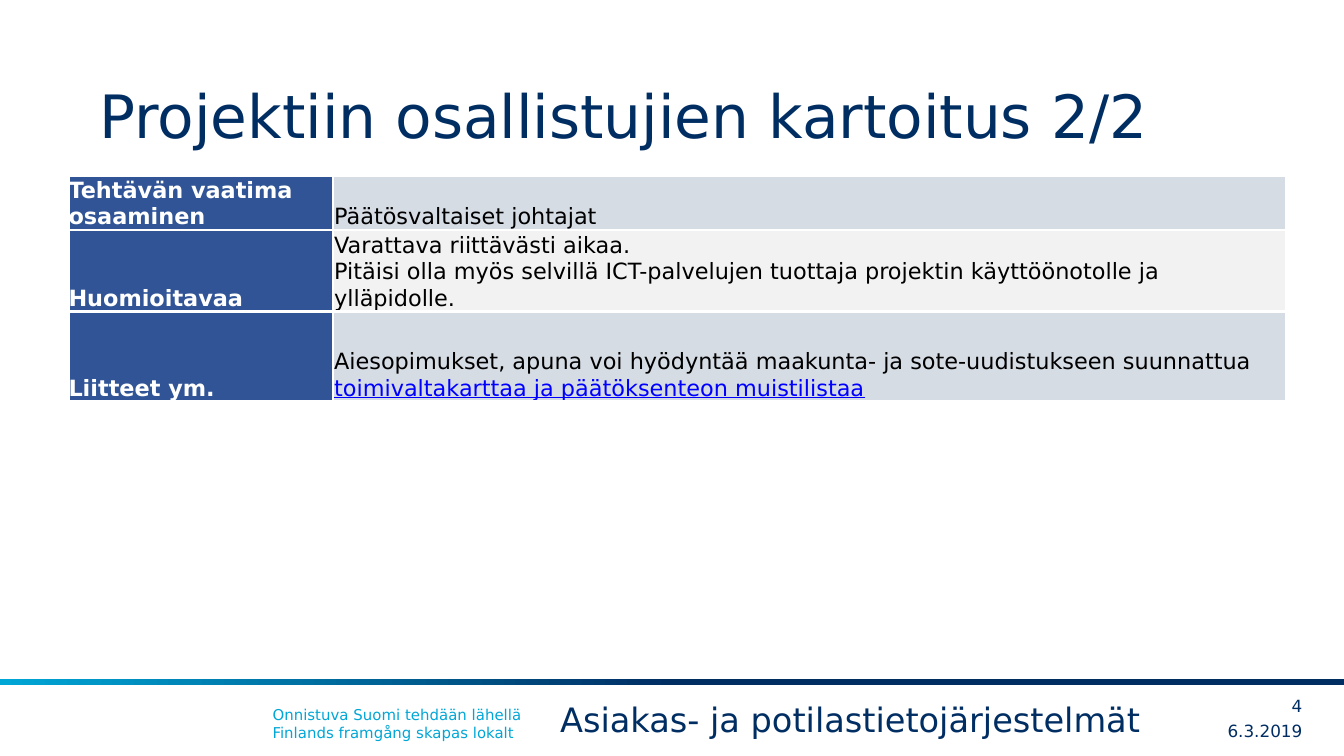
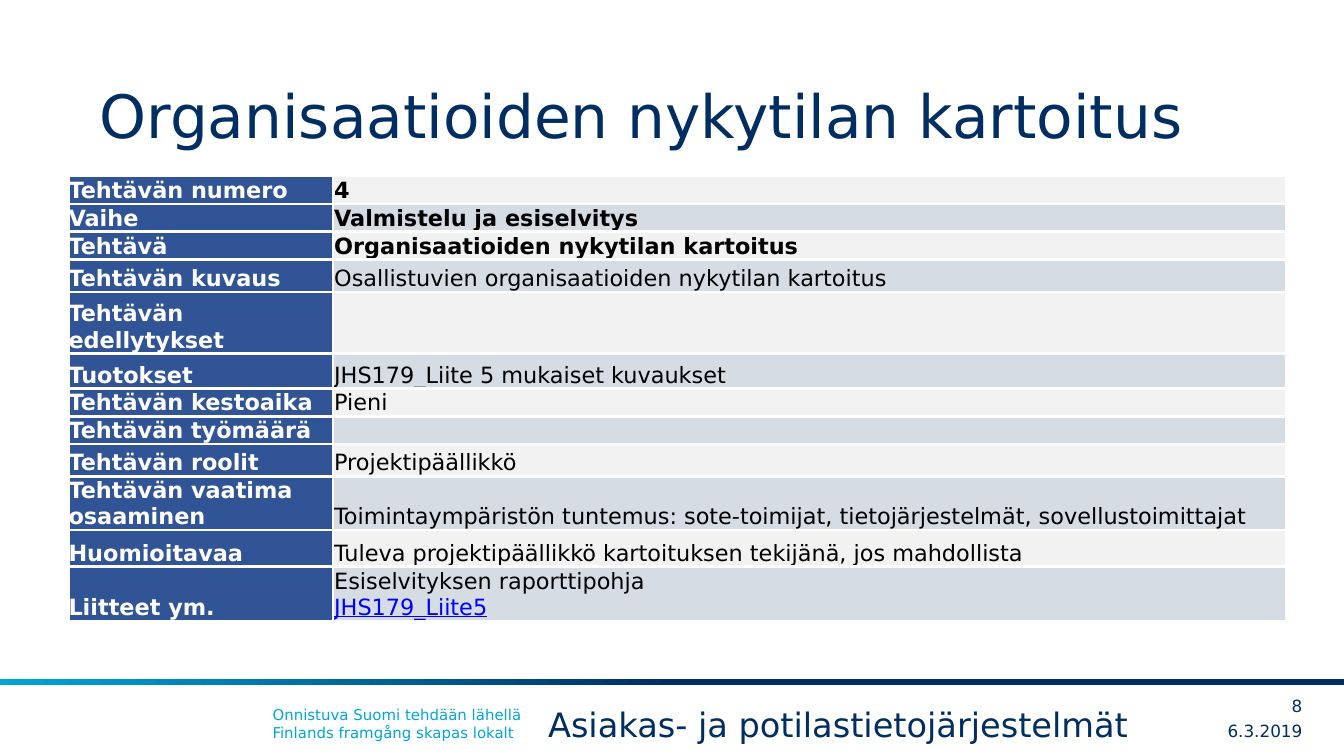
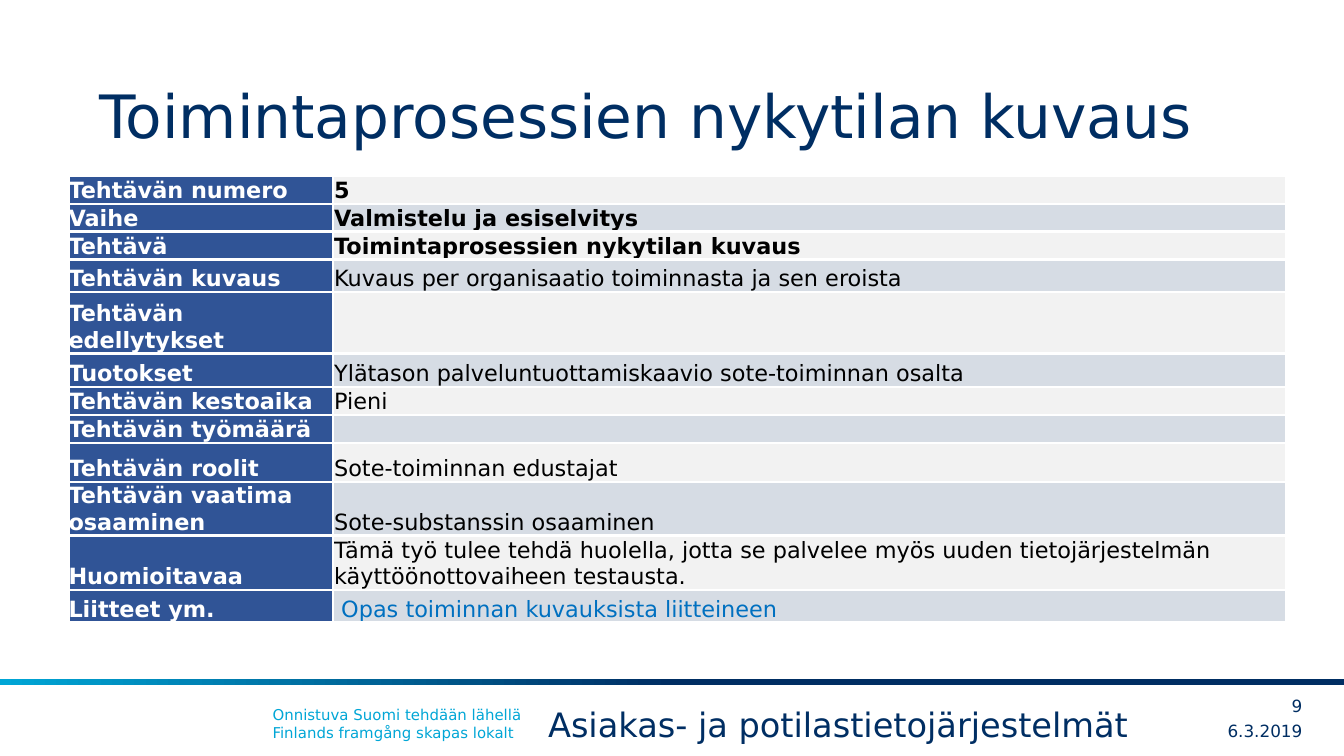
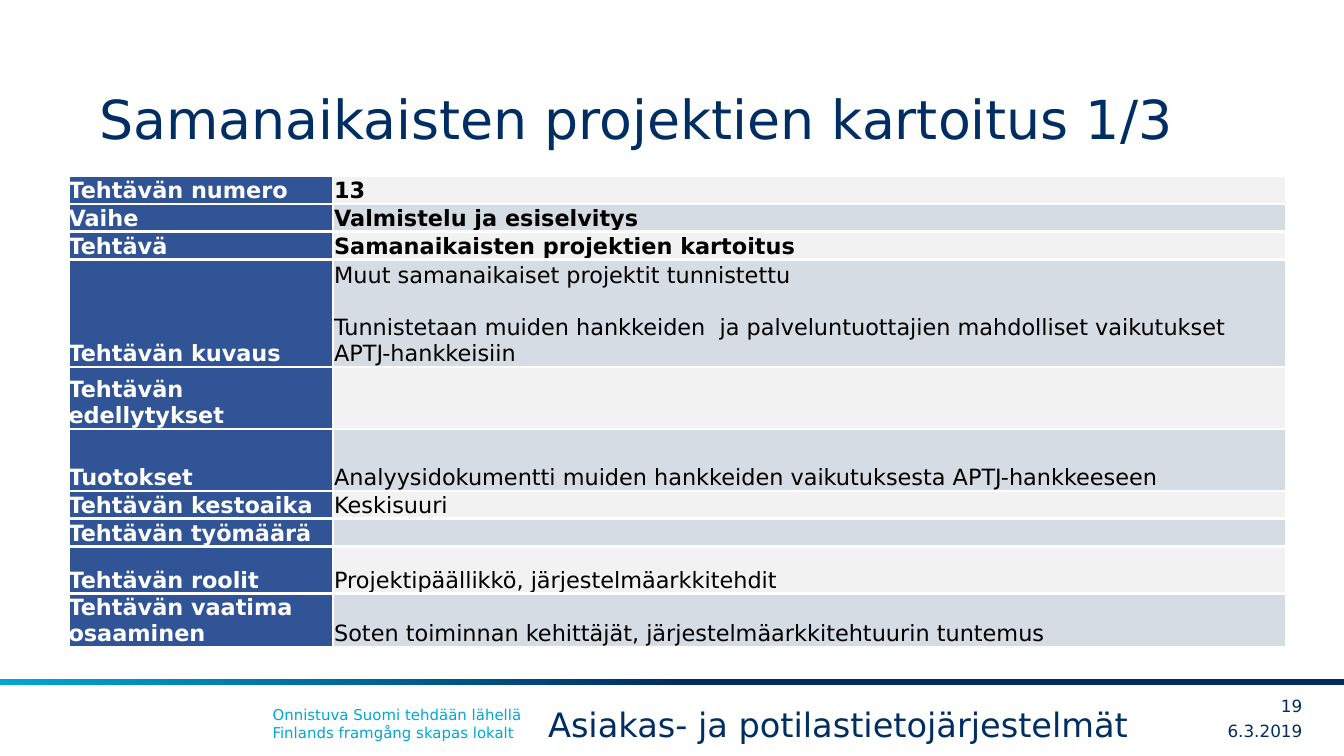
from dataclasses import dataclass

from lxml import etree
from pptx import Presentation
from pptx.dml.color import RGBColor
from pptx.enum.shapes import MSO_SHAPE
from pptx.enum.text import MSO_ANCHOR, MSO_AUTO_SIZE, PP_ALIGN
from pptx.oxml.ns import qn
from pptx.util import Inches, Pt

RECT = MSO_SHAPE.RECTANGLE
TOP, MIDDLE, BOTTOM = MSO_ANCHOR.TOP, MSO_ANCHOR.MIDDLE, MSO_ANCHOR.BOTTOM
LEFT, RIGHT = PP_ALIGN.LEFT, PP_ALIGN.RIGHT
GROW, FIXED = MSO_AUTO_SIZE.SHAPE_TO_FIT_TEXT, MSO_AUTO_SIZE.NONE

SLIDE_WIDTH = Inches(10)
SLIDE_HEIGHT = SLIDE_WIDTH * 9 // 16


@dataclass(frozen=True)
class Theme:
    font: str = "DejaVu Sans"
    navy: str = "002E63"
    cyan: str = "00A6D6"
    label_fill: str = "305496"
    value_fills: tuple[str, str] = ("F2F2F2", "D6DCE4")
    white: str = "FFFFFF"
    black: str = "000000"
    link: str = "0000FF"
    guide: str = "0070C0"
    title_size: float = 32
    long_title_size: float = 28.8
    topic_size: float = 18
    table_size: float = 12
    footer_size: float = 9
    slogan_size: float = 8
    border_width: float = 1.5
    cell_inset: float = 0.5


THEME = Theme()


@dataclass(frozen=True)
class TextStyle:
    """Type and frame settings of a text box."""
    size: float
    color: str = THEME.navy
    anchor: MSO_ANCHOR = TOP
    align: PP_ALIGN = LEFT
    insets: tuple[float, float] = (0.1, 0.05)
    wrap: bool = True
    grow: bool = False


@dataclass(frozen=True)
class Value:
    """Value of one task field; the underlined link ends the last paragraph."""
    paragraphs: tuple[str, ...] = ()
    height: float = 0.04
    link: str = ""
    color: str = THEME.black


@dataclass(frozen=True)
class TaskSlide:
    number: int
    title: str
    values: tuple[Value, ...]
    table_height: float
    first_field: int = 0
    title_size: float = THEME.title_size
    topic_at: tuple[float, float] = (3.98, 5.19)


FIELDS = (
    "Tehtävän numero", "Vaihe", "Tehtävä", "Tehtävän kuvaus",
    "Tehtävän edellytykset", "Tuotokset", "Tehtävän kestoaika",
    "Tehtävän työmäärä", "Tehtävän roolit", "Tehtävän vaatima osaaminen",
    "Huomioitavaa", "Liitteet ym.",
)
BOLD_FIELDS = 3
COLUMN_WIDTHS = (1.97, 7.09)

SLOGAN = TextStyle(THEME.slogan_size, THEME.cyan, grow=True)
FOOTER = TextStyle(THEME.footer_size, anchor=MIDDLE, align=RIGHT, insets=(0, 0))
TOPIC = TextStyle(THEME.topic_size, wrap=False, grow=True)


def task(number: str, name: str) -> tuple[Value, ...]:
    """The three identifying fields that open a task form."""
    return (Value((number,)), Value(("Valmistelu ja esiselvitys",)),
            Value((name,), 0.14))


SLIDES = (
    TaskSlide(4, "Projektiin osallistujien kartoitus 2/2", (
        Value(("Päätösvaltaiset johtajat",), 0.39),
        Value(("Varattava riittävästi aikaa.\vPitäisi olla myös selvillä "
               "ICT-palvelujen tuottaja projektin käyttöönotolle ja "
               "ylläpidolle.",), 0.56),
        Value(("Aiesopimukset, apuna voi hyödyntää maakunta- ja "
               "sote-uudistukseen suunnattua ",), 0.67,
              "toimivaltakarttaa ja päätöksenteon muistilistaa"),
    ), 1.68, first_field=9, topic_at=(4.07, 5.15)),
    TaskSlide(8, "Organisaatioiden nykytilan kartoitus", (
        *task("4", "Organisaatioiden nykytilan kartoitus"),
        Value(("Osallistuvien organisaatioiden nykytilan kartoitus",), 0.24),
        Value(height=0.46),
        Value(("JHS179_Liite 5 mukaiset kuvaukset",), 0.26),
        Value(("Pieni",)),
        Value(height=0.18),
        Value(("Projektipäällikkö",), 0.24),
        Value(("Toimintaympäristön tuntemus: sote-toimijat, "
               "tietojärjestelmät, sovellustoimittajat",), 0.39),
        Value(("Tuleva projektipäällikkö kartoituksen tekijänä, "
               "jos mahdollista",), 0.27),
        Value(("Esiselvityksen raporttipohja\v",), 0.39, "JHS179_Liite5"),
    ), 3.33),
    TaskSlide(9, "Toimintaprosessien nykytilan kuvaus", (
        *task("5", "Toimintaprosessien nykytilan kuvaus"),
        Value(("Kuvaus per organisaatio toiminnasta ja sen eroista",), 0.24),
        Value(height=0.46),
        Value(("Ylätason palveluntuottamiskaavio sote-toiminnan osalta",),
              0.25),
        Value(("Pieni",)),
        Value(height=0.18),
        Value(("Sote-toiminnan edustajat",), 0.29),
        Value(("Sote-substanssin osaaminen",), 0.39),
        Value(("Tämä työ tulee tehdä huolella, jotta se palvelee myös uuden "
               "tietojärjestelmän käyttöönottovaiheen testausta.",), 0.23),
        Value((" Opas toiminnan kuvauksista liitteineen",), 0.24,
              color=THEME.guide),
    ), 3.33),
    TaskSlide(19, "Samanaikaisten projektien kartoitus 1/3", (
        *task("13", "Samanaikaisten projektien kartoitus"),
        Value(("Muut samanaikaiset projektit tunnistettu",
               "Tunnistetaan muiden hankkeiden  ja palveluntuottajien "
               "mahdolliset vaikutukset APTJ-hankkeisiin"), 0.39),
        Value(height=0.46),
        Value(("Analyysidokumentti muiden hankkeiden vaikutuksesta "
               "APTJ-hankkeeseen",), 0.46),
        Value(("Keskisuuri",)),
        Value(height=0.18),
        Value(("Projektipäällikkö, järjestelmäarkkitehdit",), 0.35),
        Value(("Soten toiminnan kehittäjät, järjestelmäarkkitehtuurin "
               "tuntemus",), 0.39),
    ), 3.53, title_size=THEME.long_title_size),
)


# Text
def format_paragraph(p, size: float, color: str, bold: bool = False) -> None:
    for r in p.runs:
        r.font.name = THEME.font
        r.font.size = Pt(size)
        r.font.bold = bold
        r.font.color.rgb = RGBColor.from_string(color)
    # Line breaks and empty paragraphs take the text size too
    size_attr = str(round(size * 100))
    for br in p._p.findall(qn("a:br")):
        etree.SubElement(br, qn("a:rPr"), sz=size_attr)
    if not p.runs:
        etree.SubElement(p._p, qn("a:endParaRPr"), sz=size_attr)


def add_text(slide, text: str, box: tuple[float, float, float, float],
             style: TextStyle) -> None:
    tf = slide.shapes.add_textbox(*map(Inches, box)).text_frame
    tf.word_wrap = style.wrap
    tf.auto_size = GROW if style.grow else FIXED
    tf.vertical_anchor = style.anchor
    side, edge = map(Inches, style.insets)
    tf.margin_left = tf.margin_right = side
    tf.margin_top = tf.margin_bottom = edge
    p = tf.paragraphs[0]
    p.text = text
    p.alignment = style.align
    format_paragraph(p, style.size, style.color)


# Band and footer
def add_band(slide) -> None:
    sp = slide.shapes.add_shape(RECT, 0, Inches(5.05), SLIDE_WIDTH, Inches(0.05))
    sp.shadow.inherit = False
    sp.line.fill.background()
    sp.fill.gradient()
    sp.fill.gradient_angle = 180
    stops = ((0.5, THEME.navy), (1, THEME.cyan))
    for stop, (position, color) in zip(sp.fill.gradient_stops, stops):
        stop.position = position
        stop.color.rgb = RGBColor.from_string(color)


def add_footer(slide, number: int) -> None:
    add_text(slide, "Onnistuva Suomi tehdään lähellä\vFinlands framgång skapas "
             "lokalt", (1.93, 5.2, 6.54, 0.37), SLOGAN)
    add_text(slide, "6.3.2019", (8.7, 5.33, 0.99, 0.22), FOOTER)
    add_text(slide, str(number), (9.26, 5.14, 0.43, 0.22), FOOTER)


# Task table
def style_cell(cell, fill: str, inset: float) -> None:
    cell.vertical_anchor = BOTTOM
    cell.margin_left = cell.margin_right = cell.margin_top = Pt(inset)
    cell.margin_bottom = 0
    cell.fill.solid()
    cell.fill.fore_color.rgb = RGBColor.from_string(fill)
    tc_pr = cell._tc.get_or_add_tcPr()
    for i, side in enumerate(("lnL", "lnR", "lnT", "lnB")):
        ln = etree.Element(qn(f"a:{side}"), w=str(Pt(THEME.border_width)))
        solid = etree.SubElement(ln, qn("a:solidFill"))
        etree.SubElement(solid, qn("a:srgbClr"), val=THEME.white)
        tc_pr.insert(i, ln)


def fill_value(cell, value: Value, bold: bool) -> None:
    tf = cell.text_frame
    tf.text = "\n".join(value.paragraphs)
    for i, p in enumerate(tf.paragraphs):
        if i:
            p.space_before = Pt(14)
        format_paragraph(p, THEME.table_size, value.color, bold)
    if value.link:
        r = tf.paragraphs[-1].add_run()
        r.text = value.link
        r.font.name = THEME.font
        r.font.size = Pt(THEME.table_size)
        r.font.underline = True
        r.font.color.rgb = RGBColor.from_string(THEME.link)


def add_task_table(slide, content: TaskSlide) -> None:
    height = Inches(content.table_height)
    frame = slide.shapes.add_table(
        len(content.values), len(COLUMN_WIDTHS), Inches(0.51), Inches(1.31),
        Inches(sum(COLUMN_WIDTHS)), height)
    table = frame.table
    table.first_row = table.horz_banding = False
    for column, width in zip(table.columns, COLUMN_WIDTHS):
        column.width = Inches(width)
    for field, (row, value) in enumerate(zip(table.rows, content.values),
                                         content.first_field):
        row.height = Inches(value.height)
        label_cell, value_cell = row.cells
        style_cell(label_cell, THEME.label_fill, 0)
        label_cell.text_frame.text = FIELDS[field]
        format_paragraph(label_cell.text_frame.paragraphs[0],
                         THEME.table_size, THEME.white, bold=True)
        style_cell(value_cell, THEME.value_fills[field % 2], THEME.cell_inset)
        fill_value(value_cell, value, field < BOLD_FIELDS)
    frame.height = height


def add_task_slide(prs, content: TaskSlide) -> None:
    slide = prs.slides.add_slide(prs.slide_layouts[6])
    add_band(slide)
    add_footer(slide, content.number)
    add_text(slide, content.title, (0.74, 0.23, 8.51, 0.94),
             TextStyle(content.title_size, anchor=BOTTOM, insets=(0, 0.05)))
    add_task_table(slide, content)
    add_text(slide, "Asiakas- ja potilastietojärjestelmät",
             (*content.topic_at, 4.63, 0.4), TOPIC)


def main() -> None:
    prs = Presentation()
    prs.slide_width, prs.slide_height = SLIDE_WIDTH, SLIDE_HEIGHT
    for content in SLIDES:
        add_task_slide(prs, content)
    prs.save("out.pptx")


if __name__ == "__main__":
    main()
